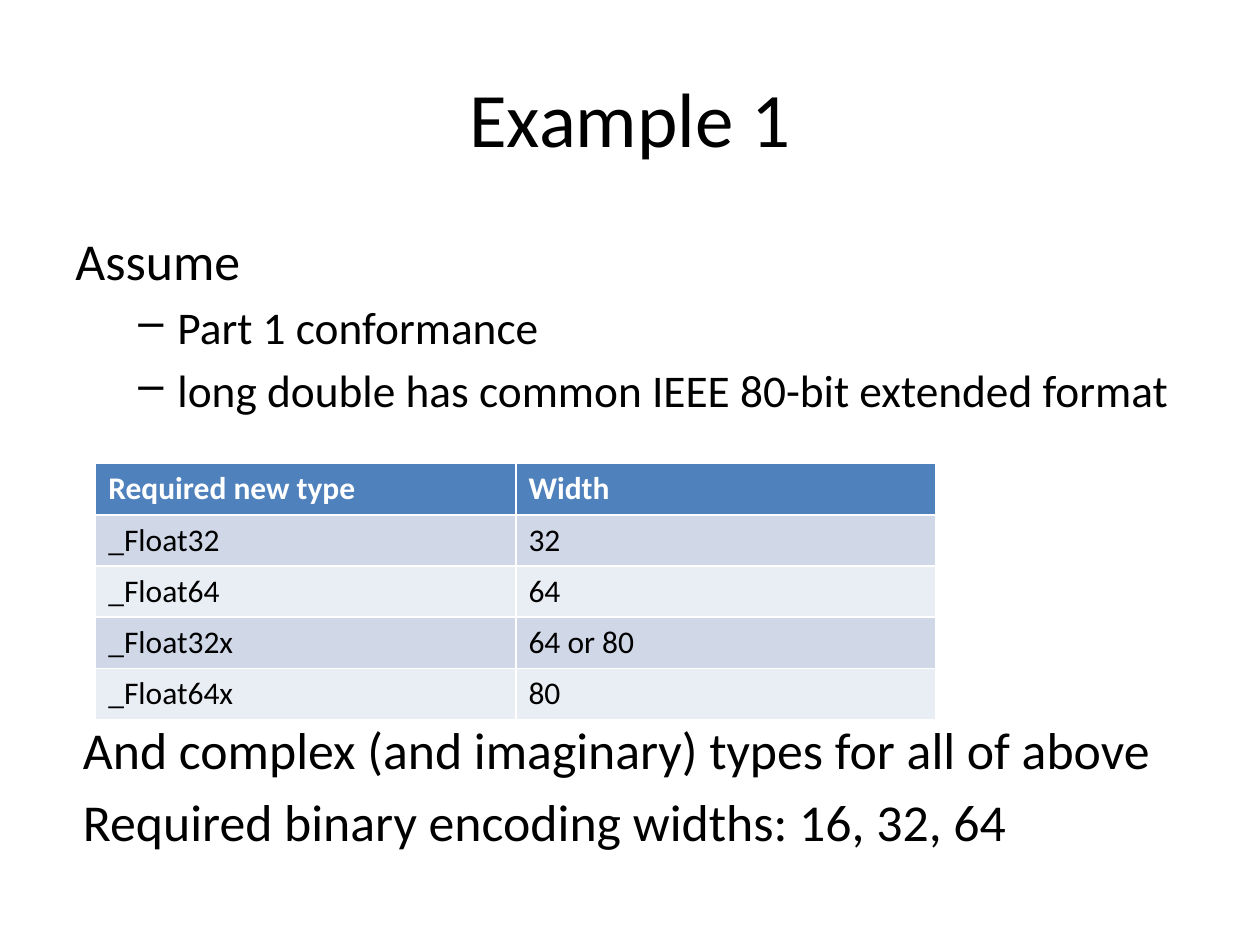
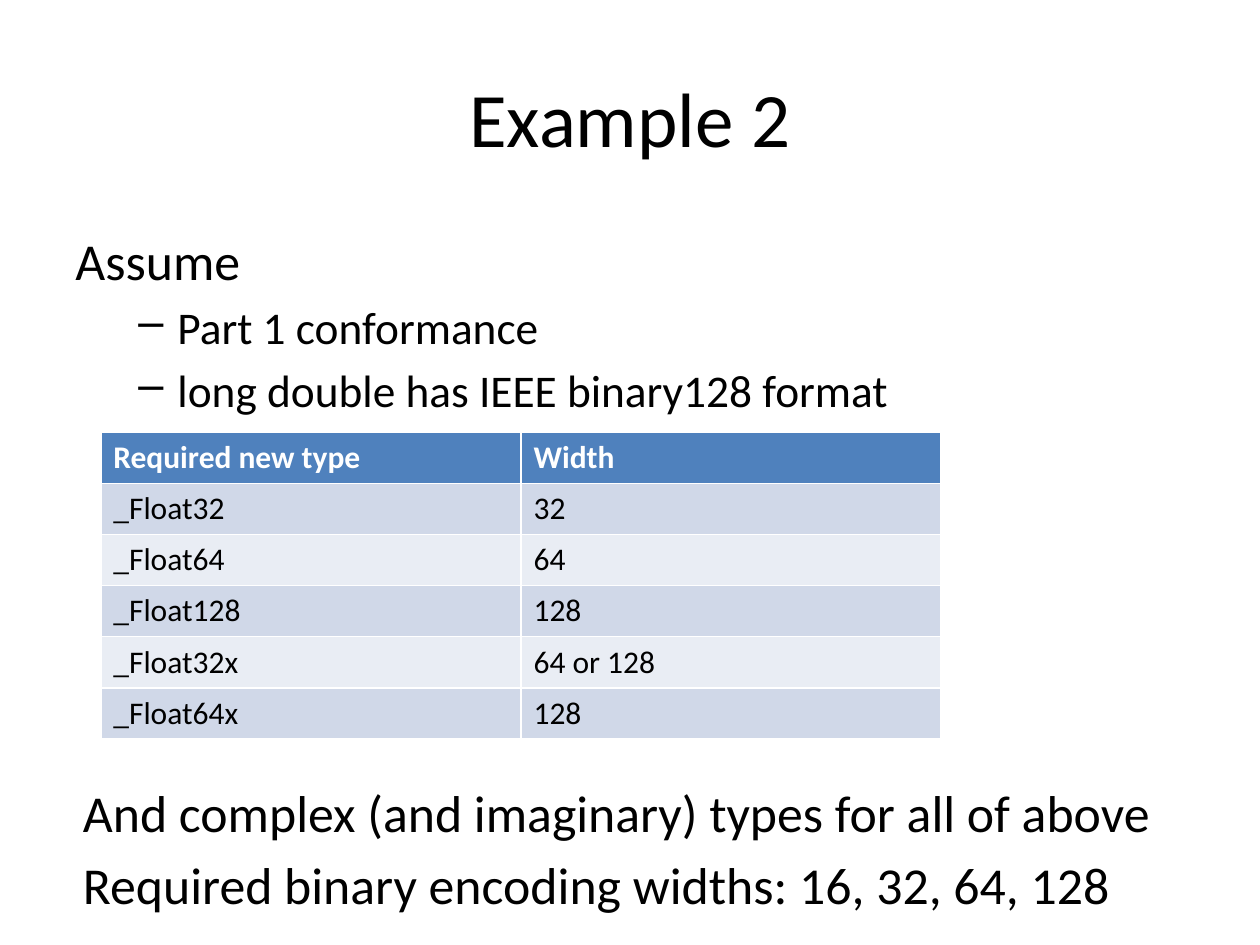
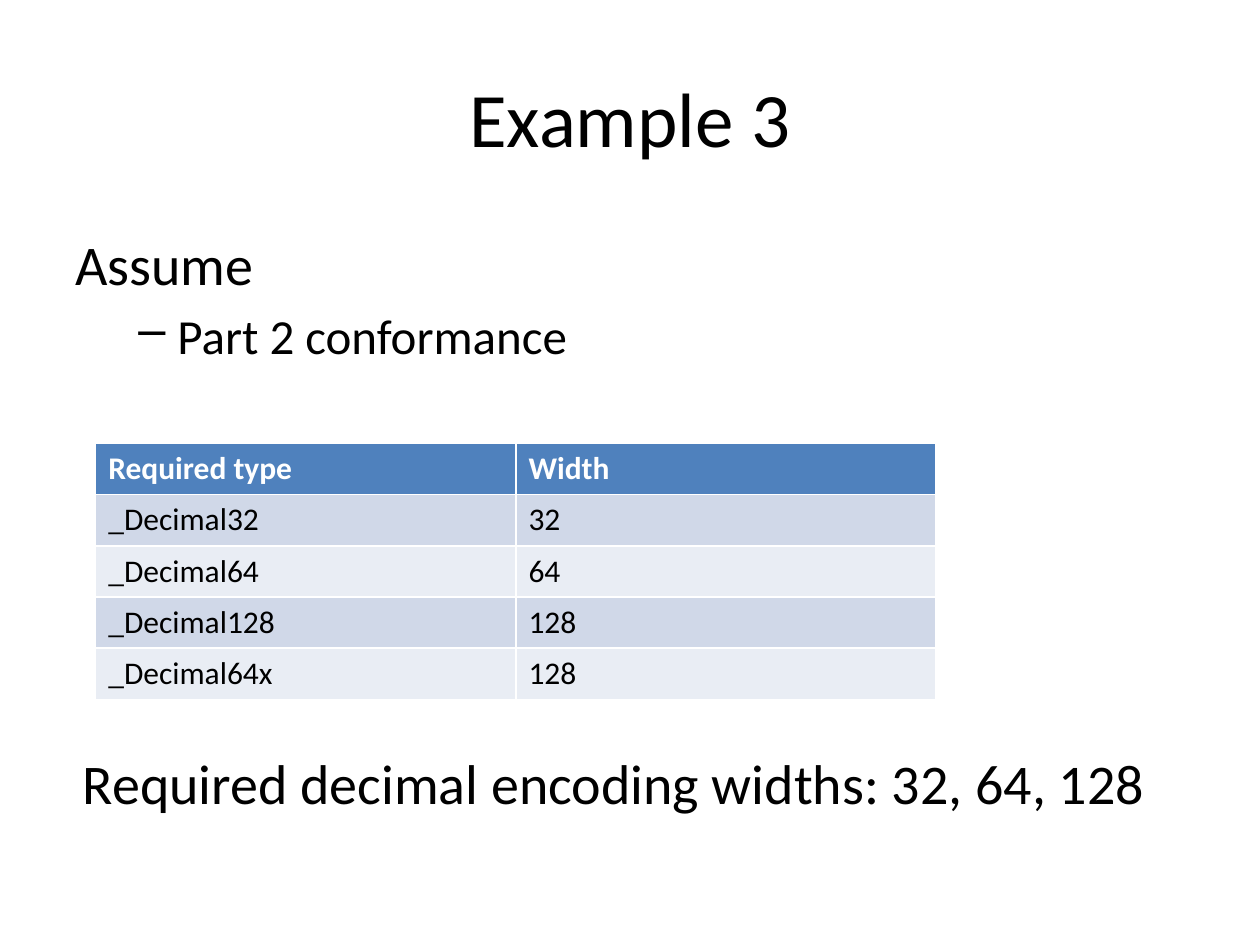
from dataclasses import dataclass

from lxml import etree
from pptx import Presentation
from pptx.dml.color import RGBColor
from pptx.enum.text import MSO_ANCHOR, PP_ALIGN
from pptx.oxml.ns import qn
from pptx.util import Inches, Pt

MIDDLE = MSO_ANCHOR.MIDDLE
CENTER = PP_ALIGN.CENTER


@dataclass(frozen=True)
class Theme:
    font: str = "Calibri"
    ink: str = "000000"
    paper: str = "FFFFFF"
    head: str = "4F81BD"
    bands: tuple = ("D0D8E8", "E9EDF4")
    title: float = 44
    cell: float = 18
    gap: float = 0.18


class Deck:
    """Holds the theme and the slide being filled."""

    def __init__(self, theme):
        self.theme = theme
        self.prs = Presentation()
        self.prs.slide_width, self.prs.slide_height = Inches(10), Inches(7.5)
        self.slide = None

    def add(self):
        self.slide = self.prs.slides.add_slide(self.prs.slide_layouts[6])

    def label(self, para, text, size, color=None, bold=False):
        run = para.add_run()
        run.text = text
        look = {"name": self.theme.font, "size": Pt(size), "bold": bold}
        for name, value in look.items():
            setattr(run.font, name, value)
        run.font.color.rgb = RGBColor.from_string(color or self.theme.ink)

    def box(self, top, height):
        area = (Inches(v) for v in (0.5, top, 9, height))
        frame = self.slide.shapes.add_textbox(*area).text_frame
        frame.word_wrap = True
        return frame

    def title(self, text):
        frame = self.box(0.3, 1.25)
        frame.vertical_anchor = MIDDLE
        para = frame.paragraphs[0]
        para.alignment = CENTER
        self.label(para, text, self.theme.title)

    def body(self, top, height, lines):
        """Fill a box with lines of (text, size, left indent, bullet)."""
        frame = self.box(top, height)
        for i, (text, size, left, mark) in enumerate(lines):
            para = frame.add_paragraph() if i else frame.paragraphs[0]
            para.space_before = Pt(round(size * self.theme.gap, 1) if i else 0)
            props = para._p.get_or_add_pPr()
            props.set("marL", str(Inches(left)))
            if mark:
                props.set("indent", str(Inches(-0.31)))
                etree.SubElement(props, qn("a:buChar")).set("char", mark)
            self.label(para, text, size)

    def table(self, left, top, rows):
        look = self.theme
        high = Inches(2.03) * len(rows) // 5
        grid = self.slide.shapes.add_table(
            len(rows), 2, Inches(left), Inches(top), Inches(6.67), high).table
        for r, row in enumerate(rows):
            fill = look.bands[(r - 1) % 2] if r else look.head
            color = look.ink if r else look.paper
            for c, text in enumerate(row):
                cell = grid.cell(r, c)
                cell.fill.solid()
                cell.fill.fore_color.rgb = RGBColor.from_string(fill)
                para = cell.text_frame.paragraphs[0]
                self.label(para, text, look.cell, color, bold=not r)


COMPLEX = "And complex (and imaginary) types for all of above"
SLIDES = [
    {"sizes": (29.6, 25.9),
     "points": ["Part 1 conformance",
                "long double has common IEEE 80-bit extended format"],
     "place": (0.76, 3.68),
     "rows": [("Required new type", "Width"), ("_Float32", "32"),
              ("_Float64", "64"), ("_Float32x", "64 or 80"),
              ("_Float64x", "80")],
     "end": 5.65,
     "notes": [COMPLEX, "Required binary encoding widths: 16, 32, 64"]},
    {"sizes": (29.6, 25.9),
     "points": ["Part 1 conformance", "long double has IEEE binary128 format"],
     "place": (0.8, 3.43),
     "rows": [("Required new type", "Width"), ("_Float32", "32"),
              ("_Float64", "64"), ("_Float128", "128"),
              ("_Float32x", "64 or 128"), ("_Float64x", "128")],
     "end": 6.15,
     "notes": [COMPLEX, "Required binary encoding widths: 16, 32, 64, 128"]},
    {"sizes": (32, 28),
     "points": ["Part 2 conformance"],
     "place": (0.76, 3.52),
     "rows": [("Required type", "Width"), ("_Decimal32", "32"),
              ("_Decimal64", "64"), ("_Decimal128", "128"),
              ("_Decimal64x", "128")],
     "end": 5.89,
     "notes": ["Required decimal encoding widths: 32, 64, 128"]},
]


def main():
    deck = Deck(Theme())
    for num, data in enumerate(SLIDES, 1):
        big, small = data["sizes"]
        deck.add()
        deck.title(f"Example {num}")
        deck.body(1.77, 1.6, [("Assume", big, 0, None)]
                  + [(text, small, 0.81, "–") for text in data["points"]])
        deck.body(data["end"], 1.25,
                  [(text, big, 0.06, None) for text in data["notes"]])
        deck.table(*data["place"], data["rows"])
    deck.prs.save("out.pptx")


if __name__ == "__main__":
    main()
